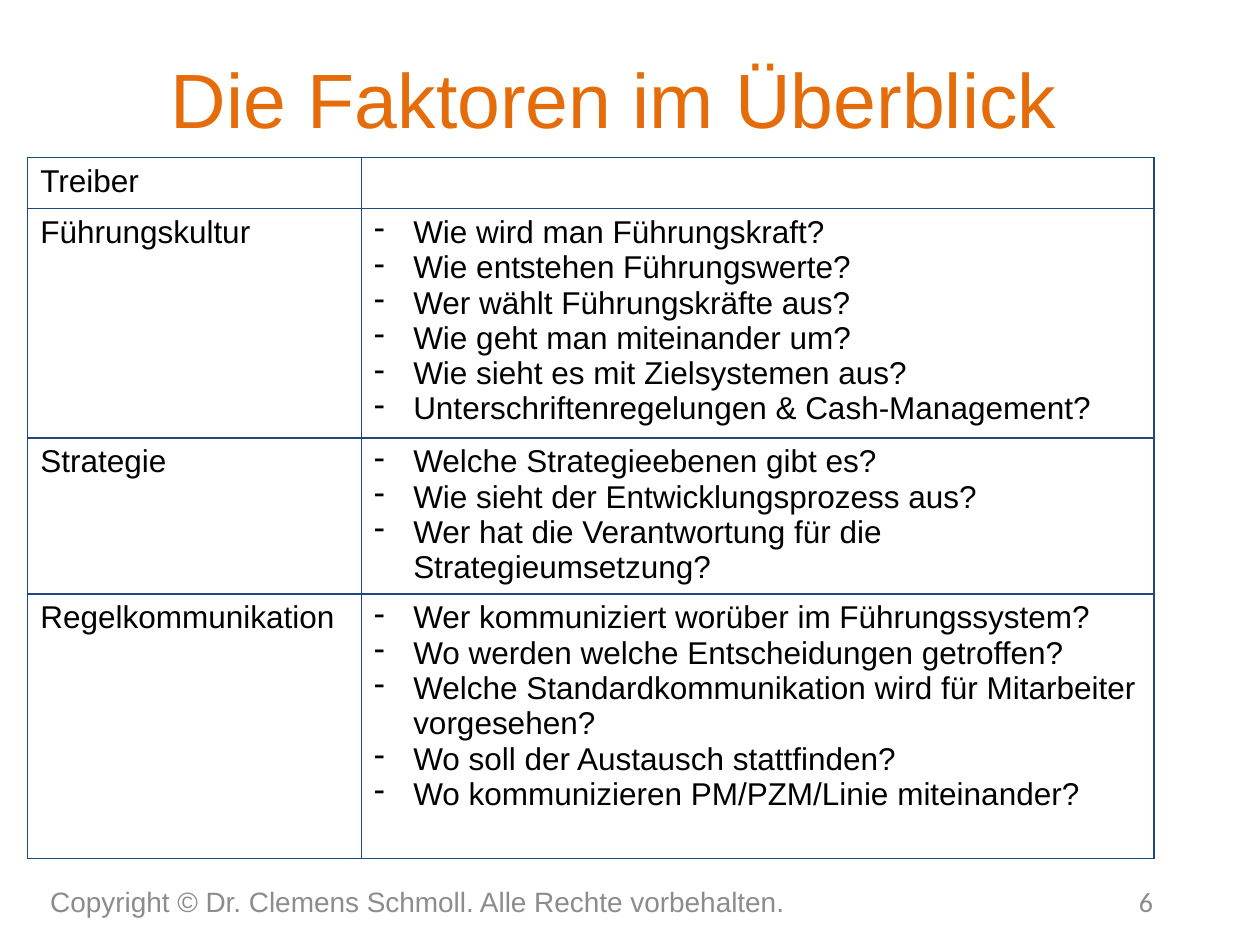
"""Build the overview slide of leadership factors."""
from lxml.etree import SubElement
from pptx import Presentation
from pptx.dml.color import RGBColor
from pptx.enum.text import MSO_ANCHOR, PP_ALIGN
from pptx.oxml.ns import qn
from pptx.util import Inches, Pt

COLORS = {"title": "E46C0A", "text": "000000", "border": "1F497D", "footer": "8C8C8C"}
COLUMN_WIDTHS = [2.65, 6.29]
ROW_HEIGHTS = [0.39, 1.82, 1.24, 2.1]
FOOTER_TOP, FOOTER_HEIGHT = 6.95, 0.4
FACTORS = [
    ("Treiber", []),
    ("Führungskultur", [
        "Wie wird man Führungskraft?",
        "Wie entstehen Führungswerte?",
        "Wer wählt Führungskräfte aus?",
        "Wie geht man miteinander um?",
        "Wie sieht es mit Zielsystemen aus?",
        "Unterschriftenregelungen & Cash-Management?",
    ]),
    ("Strategie", [
        "Welche Strategieebenen gibt es?",
        "Wie sieht der Entwicklungsprozess aus?",
        "Wer hat die Verantwortung für die Strategieumsetzung?",
    ]),
    ("Regelkommunikation", [
        "Wer kommuniziert worüber im Führungssystem?",
        "Wo werden welche Entscheidungen getroffen?",
        "Welche Standardkommunikation wird für Mitarbeiter\nvorgesehen?",
        "Wo soll der Austausch stattfinden?",
        "Wo kommunizieren PM/PZM/Linie miteinander?",
    ]),
]


def format_paragraph(paragraph, size, color, font="Arial", alignment=PP_ALIGN.LEFT):
    paragraph.alignment = alignment
    paragraph.font.size = Pt(size)
    paragraph.font.name = font
    paragraph.font.color.rgb = RGBColor.from_string(COLORS[color])


def add_title(slide, text):
    title = slide.shapes.title
    title.left, title.top, title.width, title.height = map(Inches, (0.5, 0.15, 8.75, 1.25))
    title.text_frame.text = text
    title.text_frame.vertical_anchor = MSO_ANCHOR.MIDDLE
    format_paragraph(title.text_frame.paragraphs[0], 44, "title", alignment=PP_ALIGN.CENTER)


def add_footer(slide, text, left, width, font, alignment):
    box = slide.shapes.add_textbox(
        Inches(left), Inches(FOOTER_TOP), Inches(width), Inches(FOOTER_HEIGHT))
    frame = box.text_frame
    frame.word_wrap = True
    frame.vertical_anchor = MSO_ANCHOR.MIDDLE
    frame.text = text
    format_paragraph(frame.paragraphs[0], 16, "footer", font, alignment)


def add_dash(paragraph):
    properties = paragraph._p.get_or_add_pPr()
    properties.set("marL", str(Inches(0.31)))
    properties.set("indent", str(-Inches(0.31)))
    SubElement(properties, qn("a:buChar")).set("char", "-")


def style_cell(cell):
    properties = cell._tc.get_or_add_tcPr()
    for side in ("lnL", "lnR", "lnT", "lnB"):
        line = SubElement(properties, qn(f"a:{side}"), w=str(Pt(1)))
        fill = SubElement(line, qn("a:solidFill"))
        SubElement(fill, qn("a:srgbClr")).set("val", COLORS["border"])
    cell.fill.background()


def fill_cell(cell, lines, dashed=False):
    style_cell(cell)
    frame = cell.text_frame
    for index, line in enumerate(lines):
        paragraph = frame.add_paragraph() if index else frame.paragraphs[0]
        paragraph.text = line
        if dashed:
            add_dash(paragraph)
        format_paragraph(paragraph, 18, "text")


def add_factor_table(slide):
    table = slide.shapes.add_table(
        len(ROW_HEIGHTS), len(COLUMN_WIDTHS), Inches(0.22), Inches(1.25),
        Inches(sum(COLUMN_WIDTHS)), Inches(sum(ROW_HEIGHTS))).table
    table.first_row = table.horz_banding = False
    for column, width in zip(table.columns, COLUMN_WIDTHS):
        column.width = Inches(width)
    for row, height, (factor, questions) in zip(table.rows, ROW_HEIGHTS, FACTORS):
        row.height = Inches(height)
        fill_cell(row.cells[0], [factor])
        fill_cell(row.cells[1], questions, dashed=True)


def main():
    presentation = Presentation()
    presentation.slide_width, presentation.slide_height = Inches(10), Inches(7.5)
    slide = presentation.slides.add_slide(presentation.slide_layouts[5])
    add_title(slide, "Die Faktoren im Überblick")
    add_factor_table(slide)
    add_footer(slide, "Copyright © Dr. Clemens Schmoll. Alle Rechte vorbehalten.",
               0.3, 6.36, "Arial", PP_ALIGN.LEFT)
    add_footer(slide, "6", 6.92, 2.33, "Calibri", PP_ALIGN.RIGHT)
    presentation.save("out.pptx")


if __name__ == "__main__":
    main()
